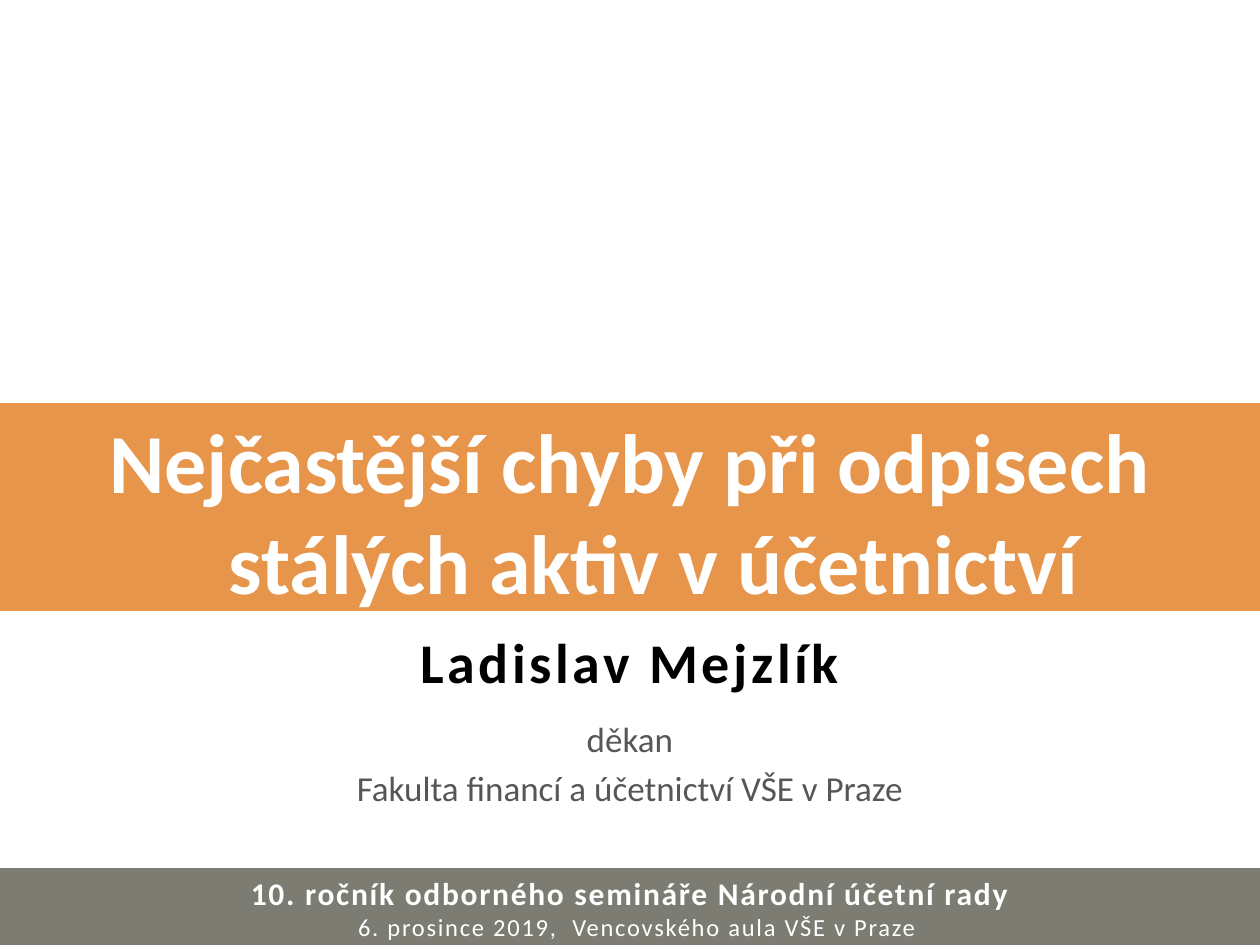
"""Build the opening slide of a seminar talk on depreciation errors."""
import pptx
import pptx.util
import pptx.dml.color
import pptx.enum.shapes
import pptx.enum.text

RGB = pptx.dml.color.RGBColor
WHITE = RGB(0xFF, 0xFF, 0xFF)
BLACK = RGB(0x00, 0x00, 0x00)
GREY = RGB(0x56, 0x56, 0x56)
ORANGE = RGB(0xE6, 0x95, 0x4B)
STONE = RGB(0x7C, 0x7C, 0x73)
SCALE = 914400 / 126
WIDTH, HEIGHT = 1260, 945
HANG = 48


def emu(px):
    return pptx.util.Emu(round(px * SCALE))


class Deck:
    def __init__(self):
        self.prs = pptx.Presentation()
        self.prs.slide_width = emu(WIDTH)
        self.prs.slide_height = emu(HEIGHT)
        self.slide = self.prs.slides.add_slide(self.prs.slide_layouts[5])
        self.font = "Calibri"

    def line(self, para, text, size, color, bold=False, space=0, left=HANG, first=-HANG):
        para.alignment = pptx.enum.text.PP_ALIGN.CENTER
        props = para._p.get_or_add_pPr()
        for key, px in {"marL": left, "indent": first}.items():
            props.set(key, str(emu(px)))
        run = para.add_run()
        run.text = text
        style = {"name": self.font, "size": pptx.util.Pt(size), "bold": bold}
        for key, value in style.items():
            setattr(run.font, key, value)
        run.font.color.rgb = color
        run._r.get_or_add_rPr().set("spc", str(space * 100))

    def fill(self, shape, top, height, color, lines):
        place = {"left": 0, "top": top, "width": WIDTH, "height": height}
        for key, px in place.items():
            setattr(shape, key, emu(px))
        shape.fill.solid()
        shape.fill.fore_color.rgb = color
        shape.line.fill.background()
        frame = shape.text_frame
        style = {
            "word_wrap": True,
            "auto_size": pptx.enum.text.MSO_AUTO_SIZE.NONE,
            "vertical_anchor": pptx.enum.text.MSO_ANCHOR.TOP,
        }
        for key, value in style.items():
            setattr(frame, key, value)
        for i, item in enumerate(lines):
            para = frame.add_paragraph() if i else frame.paragraphs[0]
            self.line(para, **item)

    def title(self, *args):
        self.fill(self.slide.shapes.title, *args)

    def band(self, *args):
        kind = pptx.enum.shapes.MSO_SHAPE.RECTANGLE
        shape = self.slide.shapes.add_shape(kind, 0, 0, 0, 0)
        shape.shadow.inherit = False
        self.fill(shape, *args)

    def save(self):
        self.prs.save("out.pptx")


def main():
    deck = Deck()
    deck.band(868, 81, STONE, [
        {"text": "10. ročník odborného semináře Národní účetní rady",
         "size": 18, "color": WHITE, "bold": True, "space": 1, "left": 0, "first": 0},
        {"text": "6. prosince 2019,  Vencovského aula VŠE v Praze",
         "size": 14, "color": WHITE, "space": 1, "left": 14, "first": 0},
    ])
    deck.band(621, 90, WHITE, [
        {"text": "Ladislav Mejzlík", "size": 32, "color": BLACK, "bold": True, "space": 2},
    ])
    roles = [(711, 59, "děkan"), (760, 49, "Fakulta financí a účetnictví VŠE v Praze")]
    for top, height, text in roles:
        deck.band(top, height, WHITE, [{"text": text, "size": 20, "color": GREY}])
    deck.title(403, 208, ORANGE, [
        {"text": "Nejčastější chyby při odpisech stálých aktiv v účetnictví",
         "size": 48, "color": WHITE, "bold": True},
    ])
    deck.save()


if __name__ == "__main__":
    main()
